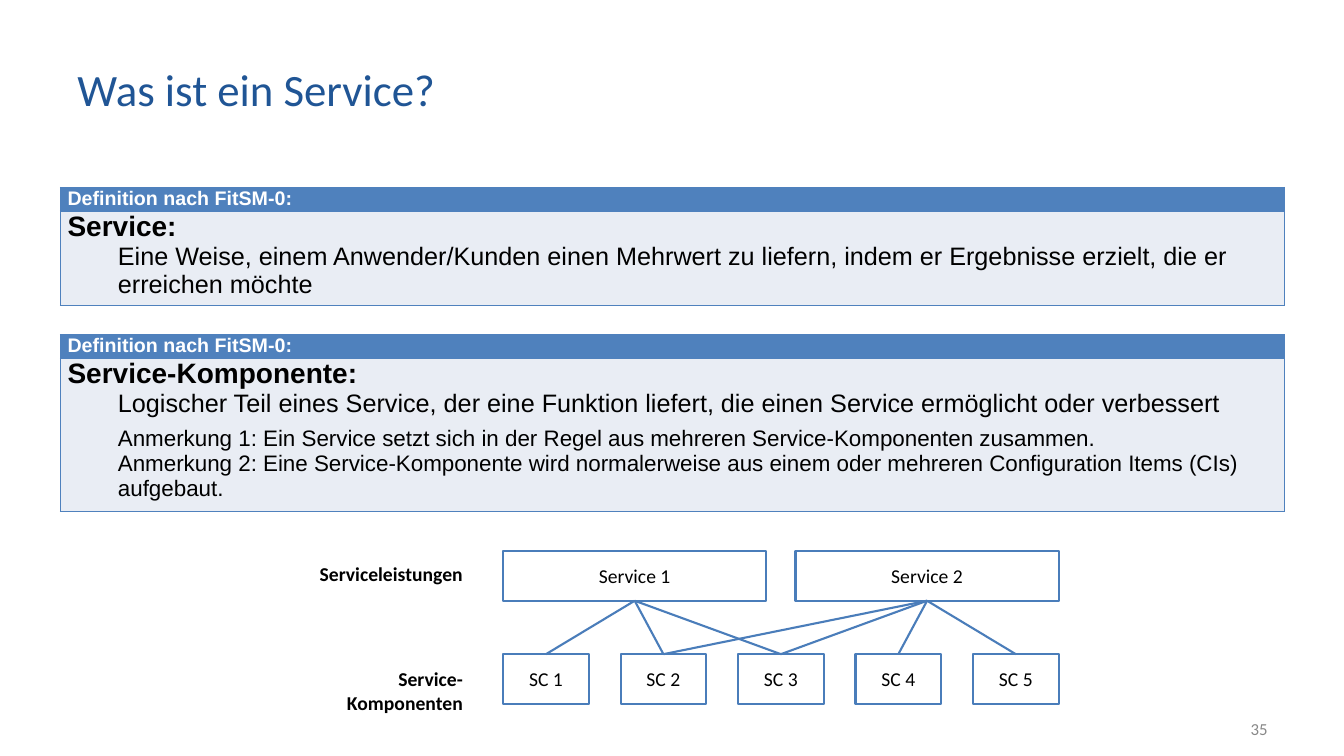
from lxml.etree import SubElement
from pptx import Presentation
from pptx.dml.color import RGBColor
from pptx.enum.shapes import MSO_CONNECTOR, MSO_SHAPE
from pptx.enum.text import MSO_ANCHOR, PP_ALIGN
from pptx.oxml.ns import qn
from pptx.util import Inches, Pt

TABLE_BLUE = "4F81BD"
DIAGRAM_BLUE = "4A7DBA"
BODY_FILL = "E9EDF4"
BLACK = "000000"
WHITE = "FFFFFF"

HEADER = "Definition nach FitSM-0:"
# Each paragraph: text, size, space after
SERVICE = [
    ("Service:", 20, 0),
    ("Eine Weise, einem Anwender/Kunden einen Mehrwert zu liefern, indem er "
     "Ergebnisse erzielt, die er erreichen möchte", 18, 0),
]
COMPONENT = [
    ("Service-Komponente:", 20, 0),
    ("Logischer Teil eines Service, der eine Funktion liefert, die einen "
     "Service ermöglicht oder verbessert", 18, 6),
    ("Anmerkung 1: Ein Service setzt sich in der Regel aus mehreren "
     "Service-Komponenten zusammen.", 16, 0),
    ("Anmerkung 2: Eine Service-Komponente wird normalerweise aus einem oder "
     "mehreren Configuration Items (CIs) aufgebaut.", 16, 0),
]
# Components used by each service
USES = {"Service 1": [1, 2, 3], "Service 2": [2, 3, 4, 5]}


def color(value):
    return RGBColor.from_string(value)


def style(para, size, tint, name="Calibri", bold=False):
    para.font.name = name
    para.font.size = Pt(size)
    para.font.bold = bold
    para.font.color.rgb = color(tint)


def add_text(page, box, text, size, tint, align=PP_ALIGN.LEFT,
             anchor=MSO_ANCHOR.MIDDLE, bold=False):
    frame = page.shapes.add_textbox(*map(Inches, box)).text_frame
    frame.word_wrap = True
    frame.vertical_anchor = anchor
    para = frame.paragraphs[0]
    para.text = text
    para.alignment = align
    style(para, size, tint, bold=bold)


def format_cell(cell, fill):
    cell.margin_left = cell.margin_right = Inches(0.07)
    cell.margin_top = cell.margin_bottom = 0
    properties = cell._tc.get_or_add_tcPr()
    for side in ("lnL", "lnR", "lnT", "lnB"):
        border = SubElement(properties, qn(f"a:{side}"), w=str(Pt(1)))
        solid = SubElement(border, qn("a:solidFill"))
        SubElement(solid, qn("a:srgbClr"), val=TABLE_BLUE)
    cell.fill.solid()
    cell.fill.fore_color.rgb = color(fill)


def add_definition(page, box, entries):
    left, top, width, height = map(Inches, box)
    table = page.shapes.add_table(2, 1, left, top, width, height).table
    table.rows[0].height = Inches(0.23)
    table.rows[1].height = height - Inches(0.23)
    header, body = table.cell(0, 0), table.cell(1, 0)
    format_cell(header, TABLE_BLUE)
    format_cell(body, BODY_FILL)

    header.text = HEADER
    style(header.text_frame.paragraphs[0], 14, WHITE, "Arial", True)

    # Bold term, then its indented explanation
    frame = body.text_frame
    for index, (text, size, after) in enumerate(entries):
        para = frame.add_paragraph() if index else frame.paragraphs[0]
        para.text = text
        para.space_after = Pt(after)
        if index:
            para.level = 1
            properties = para._p.get_or_add_pPr()
            properties.set("marL", str(Inches(0.5)))
            properties.set("indent", "0")
        style(para, size, BLACK, "Arial", index == 0)


def add_node(page, box, text):
    node = page.shapes.add_shape(MSO_SHAPE.RECTANGLE, *map(Inches, box))
    node.shadow.inherit = False
    node.fill.background()
    node.line.color.rgb = color(DIAGRAM_BLUE)
    node.line.width = Pt(1.5)
    node.text_frame.vertical_anchor = MSO_ANCHOR.MIDDLE
    para = node.text_frame.paragraphs[0]
    para.text = text
    para.alignment = PP_ALIGN.CENTER
    style(para, 14, BLACK)
    return node


def add_link(page, component, service):
    link = page.shapes.add_connector(MSO_CONNECTOR.STRAIGHT, 0, 0, 0, 0)
    link.begin_connect(component, 0)
    link.end_connect(service, 2)
    link.line.color.rgb = color(DIAGRAM_BLUE)
    link.line.width = Pt(1.5)
    SubElement(link._element.spPr, qn("a:effectLst"))


def add_diagram(page, box):
    left, top, width, height = box
    node_height = 0.49
    nodes_left = left + 2.16
    nodes_width = width - 2.16

    # Row labels
    for text, offset in (("Serviceleistungen", 0.06), ("Service-Komponenten", 1.1)):
        add_text(page, (left, top + offset, 1.86, 0.34), text, 14, BLACK,
                 PP_ALIGN.RIGHT, MSO_ANCHOR.TOP, True)

    # Evenly spread nodes in both rows
    def add_row(names, node_top, node_width):
        step = (nodes_width - node_width) / (len(names) - 1)
        return [add_node(page, (nodes_left + i * step, node_top, node_width, node_height), name)
                for i, name in enumerate(names)]

    services = add_row(list(USES), top, 2.61)
    components = add_row([f"SC {n}" for n in range(1, 6)],
                         top + height - node_height, 0.85)

    # Links from components to services
    for service, numbers in zip(services, USES.values()):
        for number in numbers:
            add_link(page, components[number - 1], service)


def main():
    deck = Presentation()
    deck.slide_width, deck.slide_height = Inches(13.33), Inches(7.5)
    page = deck.slides.add_slide(deck.slide_layouts[6])

    add_text(page, (0.67, 0.3, 9.91, 1.15), "Was ist ein Service?", 32, "205595")
    add_definition(page, (0.6, 1.86, 12.14, 1.16), SERVICE)
    add_definition(page, (0.6, 3.32, 12.14, 1.64), COMPONENT)
    add_diagram(page, (2.83, 5.47, 7.67, 1.51))
    add_text(page, (9.56, 7.03, 3.11, 0.4), "35", 12, "888888", PP_ALIGN.RIGHT)

    deck.save("out.pptx")


if __name__ == "__main__":
    main()
